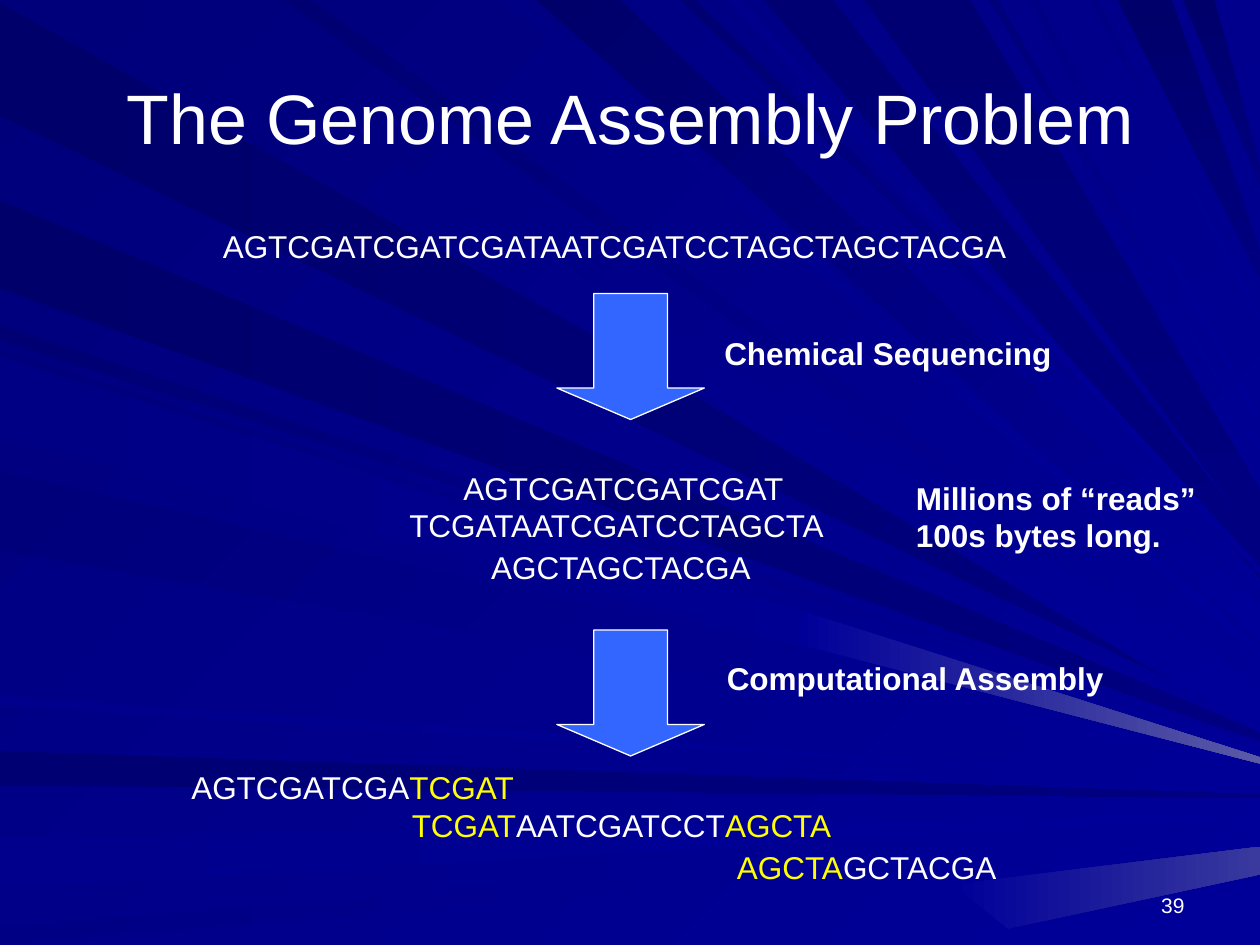
from pptx import Presentation
from pptx.dml.color import RGBColor
from pptx.enum.shapes import MSO_SHAPE as Shape
from pptx.enum.text import MSO_ANCHOR as Anchor, MSO_AUTO_SIZE as AutoSize, PP_ALIGN as Align
from pptx.util import Inches, Pt

COLORS = {
    "text": "FFFFFF",
    "overlap": "FFFF00",
    "arrow": "3366FF",
    "midnight": "00006B",
    "deep": "000073",
    "navy": "00007B",
    "dark": "000080",
    "royal": "000085",
    "bright": "00008C",
    "base": "000099",
    "glow": "39399E",
    "shine": "5A5AA6",
}

WIDTH, HEIGHT = 10, 7.5
LINE_HEIGHT = 0.4

FANS = [
    ("left", "dark", 0, [
        ("midnight", 0.02, 0.9, 5.69), ("deep", 5.96, 0.27, 6.32), ("midnight", 1.59, 0.7, 5.85)]),
    ("left", "base", 0, [
        ("bright", 6.65, 0.4, 6.47), ("royal", 7.35, 0.15, 6.62)]),
    ("top", "base", 45, [
        ("navy", 0.26, 0.75, 5.63), ("royal", 3.98, 0.18, 5.18), ("midnight", 4.26, 0.66, 4.93),
        ("deep", 5.4, 0.12, 4.4)]),
    ("top", "dark", 90, [
        ("deep", 6.06, 0.55, 4.45), ("midnight", 8.87, 0.43, 2.1), ("midnight", 9.39, 0.25, 1.4)]),
    ("left", "base", 45, [
        ("deep", 2.58, 0.12, 5.89), ("navy", 2.78, 0.64, 6), ("navy", 3.74, 0.63, 6.06)]),
    ("top", "base", 45, [
        ("deep", 2.25, 0.22, 5.5), ("bright", 5.77, 0.11, 4.53), ("navy", 7.85, 0.07, 3.57),
        ("royal", 8.15, 0.09, 3.36), ("royal", 8.65, 0.07, 2.53)]),
    ("top", "dark", 90, [("deep", 6.86, 0.84, 4.1)]),
    ("left", "base", 0, [("bright", 5.52, 0.08, 6.22), ("royal", 2.83, 0.64, 6.04)]),
]

GLINTS = [
    ("base glow", [(7.56, 7.02), (8, 7.37), (WIDTH, 6.94), (WIDTH, 6.72)]),
    ("base shine", [(6.37, 4.85), (6.33, 5.11), (WIDTH, 6.06), (WIDTH, 6.01)]),
]

SEQUENCES = [
    (1.67, 1.75, 6.66, [("AGTCGATCGATCGATAATCGATCCTAGCTAGCTACGA", "text")]),
    (3.58, 3.67, 2.8, [("AGTCGATCGATCGAT", "text")]),
    (3.15, 3.97, 3.6, [("TCGATAATCGATCCTAGCTA", "text")]),
    (3.8, 4.3, 2.37, [("AGCTAGCTACGA", "text")]),
    (1.42, 6.05, 2.8, [("AGTCGATCGA", "text"), ("TCGAT", "overlap")]),
    (3.17, 6.35, 3.6, [("TCGAT", "overlap"), ("AATCGATCCT", "text"), ("AGCTA", "overlap")]),
    (5.75, 6.68, 2.37, [("AGCTA", "overlap"), ("GCTACGA", "text")]),
]

STEPS = [
    (2.33, "Chemical Sequencing", 5.65, 2.6, 2.8),
    (5, "Computational Assembly", 5.67, 5.18, 3.2),
]


def rgb(name):
    return RGBColor.from_string(COLORS[name])


def add_text(paragraph, text, size=18, color="text", bold=False, font="Arial"):
    run = paragraph.add_run()
    run.text = text
    run.font.name = font
    run.font.size = Pt(size)
    run.font.bold = bold
    run.font.color.rgb = rgb(color)


def ray_points(edge, start, breadth, end):
    if edge == "top":
        spread = breadth / 4
        return [(start, 0), (start + breadth, 0), (WIDTH, end - spread), (WIDTH, end + spread)]
    spread = breadth / 20
    return [(0, start), (0, start + breadth), (WIDTH, end + spread), (WIDTH, end - spread)]


class Deck:
    def __init__(self):
        self.presentation = Presentation()
        self.presentation.slide_width = Inches(WIDTH)
        self.presentation.slide_height = Inches(HEIGHT)
        self.slide = self.presentation.slides.add_slide(self.presentation.slide_layouts[6])
        self.shapes = self.slide.shapes

    def paint(self, fill, shades, angle=0):
        names = shades.split()
        if len(names) == 1:
            fill.solid()
            fill.fore_color.rgb = rgb(names[0])
            return
        fill.gradient()
        fill.gradient_angle = -angle % 360
        for stop, name, position in zip(fill.gradient_stops, names, (0, 1)):
            stop.color.rgb = rgb(name)
            stop.position = position

    def beam(self, shades, points, angle=0):
        start, *corners = [(Inches(x), Inches(y)) for x, y in points]
        outline = self.shapes.build_freeform(*start)
        outline.add_line_segments(corners, close=True)
        beam = outline.convert_to_shape()
        beam.shadow.inherit = False
        beam.line.fill.background()
        self.paint(beam.fill, shades, angle)

    def arrow(self, left, top, width, height):
        arrow = self.shapes.add_shape(
            Shape.DOWN_ARROW, Inches(left), Inches(top), Inches(width), Inches(height))
        arrow.adjustments[0] = 0.5
        arrow.adjustments[1] = 0.25
        arrow.shadow.inherit = False
        self.paint(arrow.fill, "arrow")
        arrow.line.color.rgb = rgb("text")
        arrow.line.width = Pt(0.75)

    def text(self, left, top, width, height, lines, align=Align.LEFT,
             anchor=Anchor.TOP, wrap=False, **style):
        frame = self.shapes.add_textbox(
            Inches(left), Inches(top), Inches(width), Inches(height)).text_frame
        frame.word_wrap = wrap
        frame.auto_size = AutoSize.NONE if wrap else AutoSize.SHAPE_TO_FIT_TEXT
        frame.vertical_anchor = anchor
        for index, parts in enumerate(lines):
            paragraph = frame.add_paragraph() if index else frame.paragraphs[0]
            paragraph.alignment = align
            for words, color in parts:
                add_text(paragraph, words, color=color, **style)


def main():
    deck = Deck()
    deck.paint(deck.slide.background.fill, "navy base", 45)
    for edge, far_shade, angle, rays in FANS:
        for near_shade, *course in rays:
            deck.beam(f"{near_shade} {far_shade}", ray_points(edge, *course), angle)
    for shades, points in GLINTS:
        deck.beam(shades, points)

    deck.text(0.5, 0.3, 9, 1.25, [[("The Genome Assembly Problem", "text")]],
              align=Align.CENTER, anchor=Anchor.MIDDLE, wrap=True, size=40)
    for left, top, width, bases in SEQUENCES:
        deck.text(left, top, width, LINE_HEIGHT, [bases])
    for arrow_top, label, left, top, width in STEPS:
        deck.arrow(4.42, arrow_top, 1.17, 1)
        deck.text(left, top, width, LINE_HEIGHT, [[(label, "text")]], bold=True)
    deck.text(7.17, 3.75, 2.42, 0.7,
              [[("Millions of “reads”", "text")], [("100s bytes long.", "text")]], bold=True)
    deck.text(7.17, 6.83, 2.33, 0.5, [[("39", "text")]],
              align=Align.RIGHT, anchor=Anchor.BOTTOM, wrap=True, size=12)

    deck.presentation.save("out.pptx")


if __name__ == "__main__":
    main()
